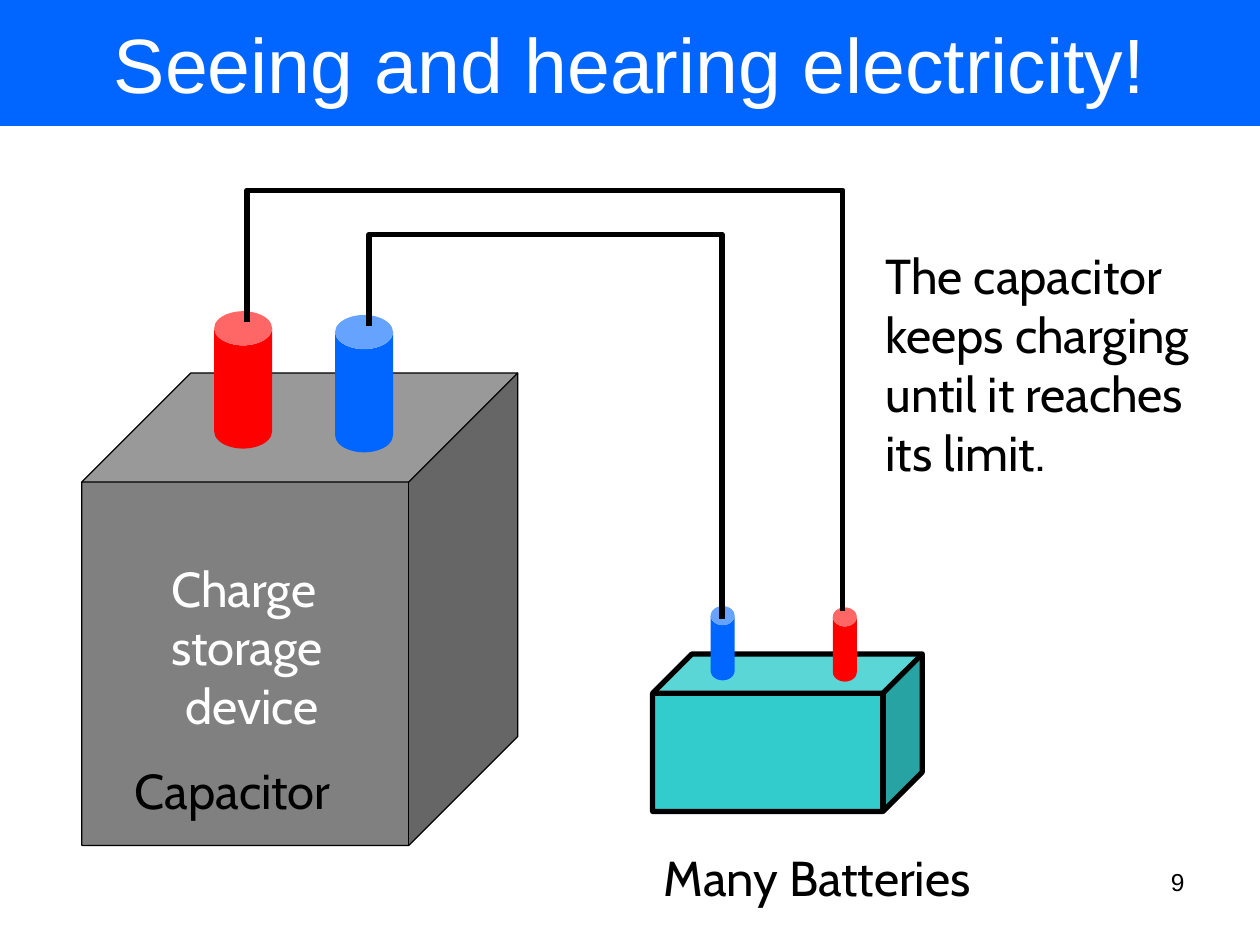
from pptx import Presentation
from pptx.dml.color import RGBColor
from pptx.enum.shapes import MSO_SHAPE
from pptx.enum.text import MSO_ANCHOR, MSO_AUTO_SIZE, PP_ALIGN
from pptx.util import Inches, Pt

COLORS = {
    "blue": "0066FF", "red": "FF0000", "grey": "808080",
    "teal": "33CCCC", "black": "000000", "white": "FFFFFF",
}


def rgb(name):
    """Return the named colour."""
    return RGBColor.from_string(COLORS[name])


def place(shape, box):
    """Move a shape to a box given in inches."""
    shape.left, shape.top, shape.width, shape.height = map(Inches, box)


def style_paragraph(paragraph, size, color, font="Cabin", align=PP_ALIGN.LEFT):
    """Set the font and alignment of a paragraph."""
    paragraph.alignment = align
    paragraph.font.name = font
    paragraph.font.size = Pt(size)
    paragraph.font.color.rgb = rgb(color)


def add_title(slide, box, text):
    """Fill the title placeholder as a coloured band."""
    title = slide.shapes.title
    place(title, box)
    title.fill.solid()
    title.fill.fore_color.rgb = rgb("blue")
    frame = title.text_frame
    frame.text = text
    frame.auto_size = MSO_AUTO_SIZE.NONE
    frame.vertical_anchor = MSO_ANCHOR.MIDDLE
    style_paragraph(frame.paragraphs[0], 44, "white", "Arial", PP_ALIGN.CENTER)


def add_label(shapes, box, lines, color="black", wrap=False):
    """Add a label with one paragraph per line."""
    label = shapes.add_textbox(*map(Inches, box))
    frame = label.text_frame
    frame.text = "\n".join(lines)
    frame.word_wrap = wrap
    frame.auto_size = MSO_AUTO_SIZE.SHAPE_TO_FIT_TEXT
    for paragraph in frame.paragraphs:
        style_paragraph(paragraph, 28, color)
    return label


def add_solid(shapes, preset, box, adjustment, color, line_width=None):
    """Add a filled cube or can, outlined if a line width is given."""
    solid = shapes.add_shape(preset, *map(Inches, box))
    solid.shadow.inherit = False
    solid.adjustments[0] = adjustment
    solid.fill.solid()
    solid.fill.fore_color.rgb = rgb(color)
    if line_width:
        solid.line.color.rgb = rgb("black")
        solid.line.width = Pt(line_width)
    else:
        solid.line.fill.background()


def add_device(slide, box, color, line_width, terminals, terminal_size, cap):
    """Group a cube with terminals placed relative to its corner."""
    group = slide.shapes.add_group_shape()
    add_solid(group.shapes, MSO_SHAPE.CUBE, box, 0.25, color, line_width)
    left, top = box[:2]
    for terminal_color, (dx, dy) in terminals.items():
        terminal_box = (left + dx, top + dy, *terminal_size)
        add_solid(group.shapes, MSO_SHAPE.CAN, terminal_box, cap, terminal_color)
    return group


def add_capacitor(slide, box):
    """Draw the capacitor with its two labels."""
    left, top = box[:2]
    add_device(slide, box, "grey", 0.75, {"red": (1.05, -0.49), "blue": (2.01, -0.46)},
               (0.46, 1.09), 0.59)
    purpose = add_label(slide.shapes, (left + 0.61, top + 1.42, 1.48, 1.5),
                        ["Charge", "storage", "device"], "white", wrap=True)
    purpose.text_frame.paragraphs[-1].alignment = PP_ALIGN.CENTER
    add_label(slide.shapes, (left + 0.32, top + 3.03, 1.81, 0.57), ["Capacitor"])


def add_battery(slide, box):
    """Draw the battery pack with its label."""
    left, top = box[:2]
    group = add_device(slide, box, "teal", 3, {"red": (1.43, -0.37), "blue": (0.46, -0.38)},
                       (0.19, 0.59), 0.8)
    add_label(group.shapes, (left - 0.01, top + 1.49, 2.75, 0.57), ["Many Batteries"])


def add_wire(slide, capacitor_end, battery_end, height):
    """Run a wire up, across and down between two terminals."""
    (start_x, start_y), (end_x, end_y) = capacitor_end, battery_end
    builder = slide.shapes.build_freeform(Inches(start_x), Inches(start_y))
    corners = [(start_x, height), (end_x, height), (end_x, end_y)]
    builder.add_line_segments([(Inches(x), Inches(y)) for x, y in corners], close=False)
    wire = builder.convert_to_shape()
    wire.shadow.inherit = False
    wire.fill.background()
    wire.line.color.rgb = rgb("black")
    wire.line.width = Pt(3)


def add_slide_number(slide, box, number):
    """Add the slide number at the right edge of its box."""
    frame = slide.shapes.add_textbox(*map(Inches, box)).text_frame
    frame.word_wrap = True
    frame.text = number
    style_paragraph(frame.paragraphs[0], 14, "black", "Arial", PP_ALIGN.RIGHT)


def main():
    """Build the slide and save it."""
    presentation = Presentation()
    presentation.slide_width, presentation.slide_height = Inches(10), Inches(7.5)
    slide = presentation.slides.add_slide(presentation.slide_layouts[5])
    add_slide_number(slide, (7.17, 6.83, 2.33, 0.52), "9")
    add_title(slide, (0, 0, 10, 1), "Seeing and hearing electricity!")
    add_capacitor(slide, (0.65, 2.96, 3.46, 3.75))
    add_battery(slide, (5.18, 5.19, 2.14, 1.25))
    add_wire(slide, (1.96, 2.56), (6.69, 4.85), 1.51)
    add_wire(slide, (2.93, 2.59), (5.73, 4.91), 1.86)
    add_label(slide.shapes, (6.93, 1.9, 2.79, 1.97),
              ["The capacitor", "keeps charging", "until it reaches", "its limit."])
    presentation.save("out.pptx")


if __name__ == "__main__":
    main()
